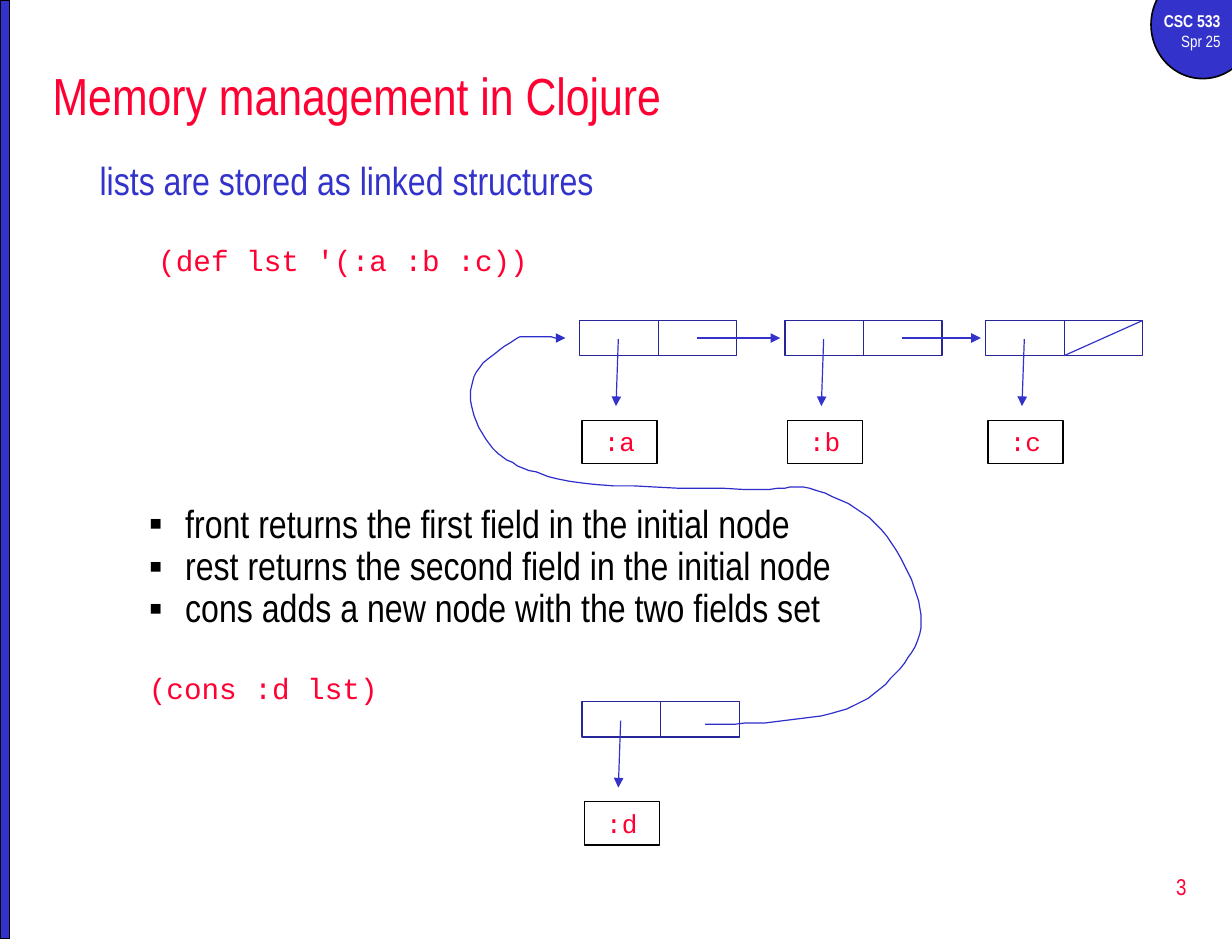
import itertools

import pptx
import pptx.util
import pptx.dml.color
import pptx.enum.shapes
import pptx.enum.text
import pptx.oxml.ns

PX = 9144  # EMU per px, 100 px to the inch
RGB = pptx.dml.color.RGBColor
RED = RGB(0xFF, 0x00, 0x33)
BLUE = RGB(0x33, 0x33, 0xCC)
CELL_BLUE = RGB(0x26, 0x26, 0x99)
CURVE_BLUE = RGB(0x2E, 0x2E, 0xCB)
BLACK = RGB(0x00, 0x00, 0x00)
WHITE = RGB(0xFF, 0xFF, 0xFF)

SANS, MONO = "Arial Narrow", "Courier New"
ALIGN = pptx.enum.text.PP_ALIGN
ANCHOR = pptx.enum.text.MSO_ANCHOR
SHAPE = pptx.enum.shapes.MSO_SHAPE

TITLE = {"size": 32, "name": SANS, "color": RED}
TOPIC = {"size": 24, "name": SANS, "color": BLUE}
POINT = {"size": 24, "name": SANS, "color": BLACK}
CODE = {"size": 18, "name": MONO, "color": RED}
VALUE = {"size": 16, "name": MONO, "color": RED}
NUMBER = {"size": 14, "name": SANS, "color": RED}
BADGE = {"size": 10, "name": SANS, "color": WHITE}
COURSE = {**BADGE, "size": 10.5, "bold": True}

TIGHT = {"line_spacing": 0.9}
AFTER_GAP = {**TIGHT, "space_before": pptx.util.Pt(26)}
RIGHT = {"alignment": ALIGN.RIGHT}
CODE_INDENT = 50
POINT_INDENT, POINT_HANG = 81, -31

# A node is two cells side by side, with its value in a box below.
CELL_W, CELL_H = 67, 30
VALUE_W, VALUE_H = 64, 37
VALUE_DX, VALUE_DY = 2, 85        # from the node's corner to its value box
FIRST_DX = CELL_W // 2            # middle of the first field
SECOND_DX = CELL_W * 3 // 2       # middle of the second field
FIELD_DY = 16
POINTER_DROP, POINTER_LEAN = 57, -2
NEXT_GAP = 4                      # space between an arrowhead and the next node

# The new node's link leaves to the right, rounds the text and enters the list.
LEAVE_NEW_NODE = [(601, 617), (660, 615), (722, 604)]
RIGHT_BEND = [(763, 574), (785, 535), (774, 488), (741, 441), (690, 416)]
CROSS_LEFT = [(646, 417), (510, 413), (462, 404)]
LEFT_BEND = [(424, 386), (403, 350), (406, 317), (438, 290)]
ENTER_LIST = [(455, 287), (482, 288)]
LINK_STOPS = LEAVE_NEW_NODE + RIGHT_BEND + CROSS_LEFT + LEFT_BEND + ENTER_LIST
STEPS_PER_STOP = 8


def emu(*lengths):
    return [pptx.util.Emu(length * PX) for length in lengths]


def set_values(target, values):
    for name, value in values.items():
        setattr(target, name, value)


def add_xml(parent, tag, **attributes):
    parent.append(parent.makeelement(pptx.oxml.ns.qn(tag), attributes))


def write(para, text, size, name, color, bold=False):
    span = para.add_run()
    span.text = text
    set_values(span.font, {"size": pptx.util.Pt(size), "name": name, "bold": bold})
    span.font.color.rgb = color


def add_text(page, box, lines, anchor=ANCHOR.TOP):
    """Add a text box; each line is (text, font values, paragraph values)."""
    frame = page.shapes.add_textbox(*emu(*box)).text_frame
    set_values(frame, {"word_wrap": True, "vertical_anchor": anchor})
    for index, (text, font, layout) in enumerate(lines):
        para = frame.add_paragraph() if index else frame.paragraphs[0]
        set_values(para, layout)
        write(para, text, **font)
    return frame.paragraphs


def indent(para, left, first=0, bullet=None):
    props = para._p.get_or_add_pPr()
    props.set("marL", str(left * PX))
    props.set("indent", str(first * PX))
    if bullet:
        add_xml(props, "a:buFont", typeface="Arial")
        add_xml(props, "a:buChar", char=bullet)


def style_line(item, color, width=0.75, arrow=False):
    item.line.color.rgb = color
    item.line.width = pptx.util.Pt(width)
    if arrow:
        add_xml(item.line._get_or_add_ln(), "a:tailEnd", type="triangle")


def add_outline(page, kind, box, color, width=0.75, fill=None):
    shape = page.shapes.add_shape(kind, *emu(*box))
    shape.shadow.inherit = False
    if fill is None:
        shape.fill.background()
    else:
        shape.fill.solid()
        shape.fill.fore_color.rgb = fill
    style_line(shape, color, width)
    return shape


def add_line(page, start, end, arrow=True):
    kind = pptx.enum.shapes.MSO_CONNECTOR.STRAIGHT
    line = page.shapes.add_connector(kind, *emu(*start, *end))
    style_line(line, BLUE, arrow=arrow)
    add_xml(line._element.spPr, "a:effectLst")


def add_frame(page):
    """Draw the course badge, the side bar and the page number."""
    add_outline(page, SHAPE.OVAL, (981, -25, 88, 92), BLACK, 1, BLUE)
    add_text(page, (967, 4, 83, 46),
             [("CSC 533", COURSE, RIGHT), ("Spr 25", BADGE, RIGHT)])
    add_outline(page, SHAPE.RECTANGLE, (0, 0, 8, 800), BLACK, 1, BLUE)
    add_text(page, (802, 729, 219, 53), [("3", NUMBER, RIGHT)], ANCHOR.MIDDLE)


def add_intro(page, box):
    topic, code = add_text(page, box, [
        ("lists are stored as linked structures", TOPIC, TIGHT),
        ("(def lst '(:a :b :c))", CODE, AFTER_GAP),
    ])
    indent(topic, 0)
    indent(code, CODE_INDENT)


def add_operations(page, box):
    *points, code = add_text(page, box, [
        ("front returns the first field in the initial node", POINT, TIGHT),
        ("rest returns the second field in the initial node", POINT, TIGHT),
        ("cons adds a new node with the two fields set", POINT, TIGHT),
        ("(cons :d lst)", CODE, AFTER_GAP),
    ])
    for para in points:
        indent(para, POINT_INDENT, POINT_HANG, "▪")
    indent(code, CODE_INDENT)


def add_node(page, left, top, label):
    """Draw a two-field node whose first field points at a labelled value."""
    for column in range(2):
        cell = (left + column * CELL_W, top, CELL_W, CELL_H)
        add_outline(page, SHAPE.RECTANGLE, cell, CELL_BLUE)
    x, y = left + FIRST_DX, top + FIELD_DY
    add_line(page, (x, y), (x + POINTER_LEAN, y + POINTER_DROP))
    box = (left + VALUE_DX, top + VALUE_DY, VALUE_W, VALUE_H)
    value = add_outline(page, SHAPE.RECTANGLE, box, BLACK)
    value.text_frame.vertical_anchor = ANCHOR.TOP
    para = value.text_frame.paragraphs[0]
    para.alignment = ALIGN.CENTER
    write(para, label, **VALUE)


def add_linked_list(page, top, nodes):
    """Draw the nodes in a row, link each to the next and strike the last field."""
    for left, label in nodes:
        add_node(page, left, top, label)
    lefts = [left for left, label in nodes]
    y = top + CELL_H // 2
    for left, following in itertools.pairwise(lefts):
        add_line(page, (left + SECOND_DX, y), (following - NEXT_GAP, y))
    last = lefts[-1] + CELL_W
    add_line(page, (last + CELL_W, top), (last, top + CELL_H), arrow=False)


def smooth_path(stops):
    """Return points along a Catmull-Rom curve that passes through every stop."""
    padded = [stops[0], *stops, stops[-1]]
    points = [stops[0]]
    for window in zip(padded, padded[1:], padded[2:], padded[3:]):
        for step in range(1, STEPS_PER_STOP + 1):
            t = step / STEPS_PER_STOP
            weights = (
                (-t + 2 * t**2 - t**3) / 2,
                (2 - 5 * t**2 + 3 * t**3) / 2,
                (t + 4 * t**2 - 3 * t**3) / 2,
                (t**3 - t**2) / 2,
            )
            points.append(tuple(
                sum(weight * value for weight, value in zip(weights, axis))
                for axis in zip(*window)
            ))
    return points


def add_link(page, stops):
    start, *rest = smooth_path(stops)
    builder = page.shapes.build_freeform(*start, scale=PX)
    builder.add_line_segments(rest, close=False)
    link = builder.convert_to_shape()
    link.shadow.inherit = False
    link.fill.background()
    style_line(link, CURVE_BLUE, arrow=True)


def main():
    deck = pptx.Presentation()
    deck.slide_width, deck.slide_height = emu(1050, 800)
    page = deck.slides.add_slide(deck.slide_layouts[6])
    add_frame(page)
    add_text(page, (35, 43, 992, 75),
             [("Memory management in Clojure", TITLE, {})], ANCHOR.MIDDLE)
    add_intro(page, (75, 133, 952, 258))
    add_operations(page, (67, 425, 952, 196))
    add_linked_list(page, 273, [(494, ":a"), (669, ":b"), (840, ":c")])
    add_node(page, 496, 598, ":d")
    add_link(page, LINK_STOPS)
    deck.save("out.pptx")


if __name__ == "__main__":
    main()
